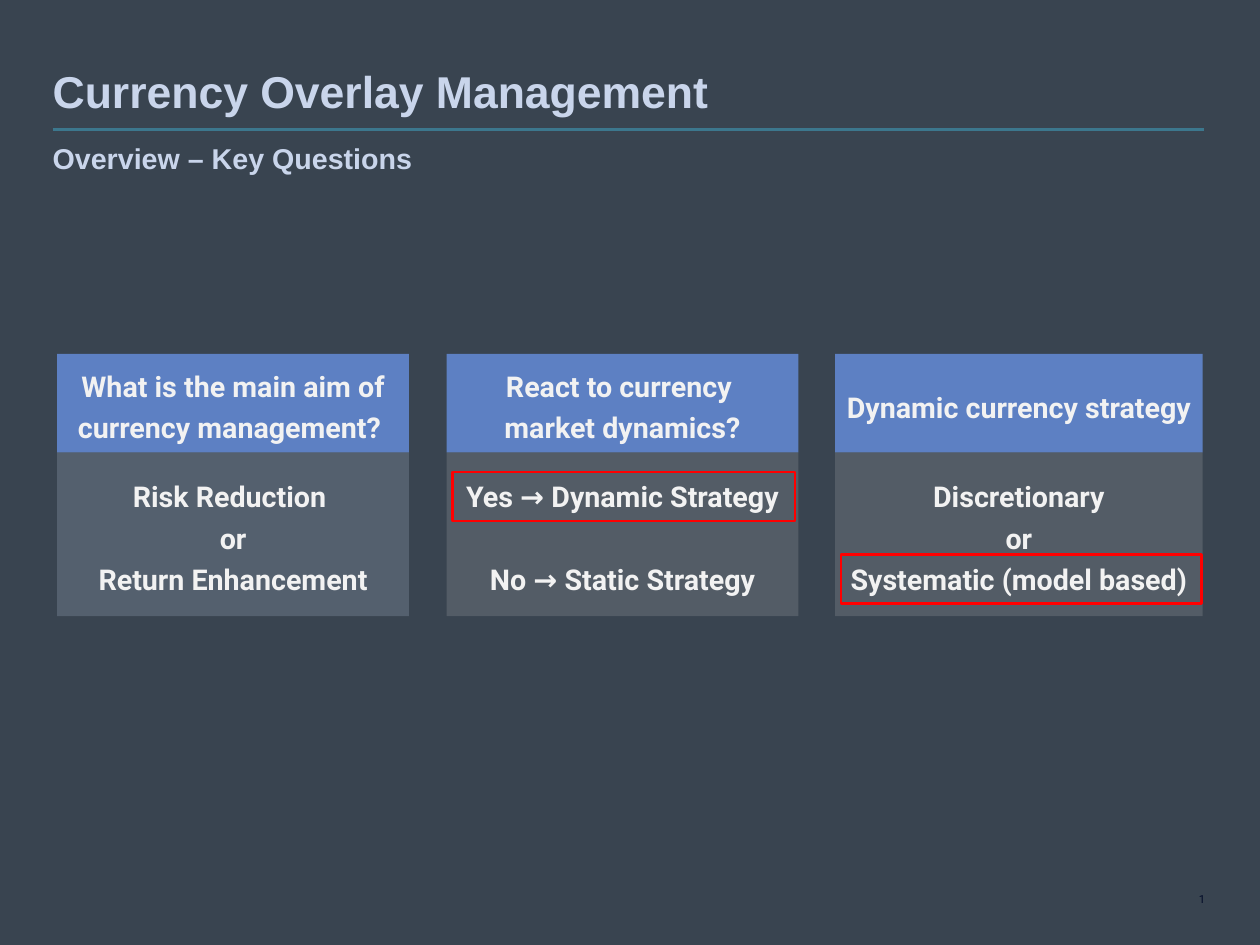
"""Build the currency overlay slide with three question cards."""
from lxml.etree import SubElement
from pptx import Presentation
from pptx.dml.color import RGBColor
from pptx.enum.shapes import MSO_CONNECTOR, MSO_SHAPE
from pptx.enum.text import MSO_ANCHOR, MSO_AUTO_SIZE, PP_ALIGN
from pptx.oxml.ns import qn
from pptx.util import Inches, Pt

COLORS = {
    "background": "394450", "rule": "3C778D", "heading": "C9D5EB",
    "header": "5D80C3", "aim": "C4D2EA", "choice": "BEBEBE",
    "text": "F2F2F2", "number": "010A27", "highlight": "FF0000",
}
CARDS = [
    (0.5, 3.07, "aim", "What is the main aim of currency management? ",
     ["Risk Reduction ", "or", "Return Enhancement"], 0.1),
    (3.9, 3.07, "choice", "React to currency \vmarket dynamics?",
     ["Yes → Dynamic Strategy", "No → Static Strategy"], 26),
    (7.29, 3.21, "choice", "Dynamic currency strategy",
     ["Discretionary", "or", "Systematic (model based)"], 0.1),
]
HIGHLIGHTS = [(7.34, 4.84, 3.15, 0.43), (3.95, 4.12, 2.99, 0.43)]
CARD_TOP, HEADER_HEIGHT, ANSWER_HEIGHT = 3.09, 0.86, 1.43


class SlideBuilder:
    """Hold the style and the current slide."""

    def __init__(self, slide, colors):
        self.s = slide
        self.colors = colors
        fill = slide.background.fill
        fill.solid()
        fill.fore_color.rgb = self.color("background")

    def color(self, name):
        return RGBColor.from_string(self.colors[name])

    def set_text(self, sp, lines, size, color, font="Roboto", bold=True,
                 anchor=MSO_ANCHOR.MIDDLE, align=PP_ALIGN.CENTER, spacing=1.2,
                 before=0, inset=0):
        tf = sp.text_frame
        tf.auto_size = MSO_AUTO_SIZE.NONE
        tf.word_wrap = True
        tf.vertical_anchor = anchor
        tf.margin_left = tf.margin_right = tf.margin_top = tf.margin_bottom = Inches(inset)
        tf.text = "\n".join(lines)
        for p in tf.paragraphs:
            p.alignment = align
            p.line_spacing = spacing
            p.space_before = Pt(before)
            for r in p.runs:
                r.font.name = font
                r.font.size = Pt(size)
                r.font.bold = bold
                r.font.color.rgb = self.color(color)
        return tf

    def placeholder(self, index, box, text, size, anchor, spacing, before=0):
        sp = self.s.placeholders[index]
        sp.left, sp.top, sp.width, sp.height = map(Inches, box)
        tf = self.set_text(sp, [text], size, "heading", "Arial", anchor=anchor,
                           align=PP_ALIGN.LEFT, spacing=spacing, before=before)
        pPr = tf.paragraphs[0]._p.get_or_add_pPr()
        pPr.set("marL", "0")
        pPr.set("indent", "0")
        SubElement(pPr, qn("a:buNone"))

    def rule(self, x1, x2, y):
        line = self.s.shapes.add_connector(
            MSO_CONNECTOR.STRAIGHT, Inches(x1), Inches(y), Inches(x2), Inches(y))
        line.line.color.rgb = self.color("rule")
        line.line.width = Pt(2)
        SubElement(line._element.spPr, qn("a:effectLst"))

    def rectangle(self, shapes, box, fill=None, alpha=None):
        sp = shapes.add_shape(MSO_SHAPE.RECTANGLE, *map(Inches, box))
        sp.shadow.inherit = False
        if fill is None:
            sp.fill.background()
            return sp
        sp.fill.solid()
        sp.fill.fore_color.rgb = self.color(fill)
        sp.line.fill.background()
        if alpha is not None:
            srgb = sp._element.spPr.find(".//" + qn("a:srgbClr"))
            SubElement(srgb, qn("a:alpha"), val=str(alpha * 1000))
        return sp

    def card(self, left, width, fill, question, answers, before):
        shapes = self.s.shapes.add_group_shape().shapes
        header = self.rectangle(shapes, (left, CARD_TOP, width, HEADER_HEIGHT), "header")
        self.set_text(header, [question], 18, "text", inset=0.04)
        body = self.rectangle(
            shapes, (left, CARD_TOP + HEADER_HEIGHT, width, ANSWER_HEIGHT), fill, 20)
        tf = self.set_text(body, answers, 18, "text", before=before)
        tf.paragraphs[0].space_before = Pt(0.1)

    def highlight(self, box):
        sp = self.rectangle(self.s.shapes, box)
        sp.line.color.rgb = self.color("highlight")
        sp.line.width = Pt(1.5)

    def slide_number(self, box):
        sp = self.s.shapes.add_textbox(*map(Inches, box))
        tf = self.set_text(sp, ["1"], 7, "number", bold=False, anchor=MSO_ANCHOR.BOTTOM,
                           align=PP_ALIGN.RIGHT, spacing=1)
        field = tf.paragraphs[0].runs[0]._r
        field.tag = qn("a:fld")
        field.set("id", "{B6F15528-21DE-4FAA-801E-634DDDAF4B2B}")
        field.set("type", "slidenum")


def main():
    prs = Presentation()
    prs.slide_width, prs.slide_height = Inches(11), Inches(8.25)
    s = SlideBuilder(prs.slides.add_slide(prs.slide_layouts[1]), COLORS)
    s.rule(0.46, 10.51, 1.13)
    s.placeholder(0, (0.46, 0, 10.05, 1.03), "Currency Overlay Management", 28,
                  MSO_ANCHOR.BOTTOM, 0.85)
    s.placeholder(1, (0.46, 1.23, 10.09, 0.39), "Overview – Key Questions", 18,
                  MSO_ANCHOR.TOP, 1, 2)
    s.slide_number((10.07, 7.5, 0.45, 0.41))
    for card in CARDS:
        s.card(*card)
    for box in HIGHLIGHTS:
        s.highlight(box)
    prs.save("out.pptx")


if __name__ == "__main__":
    main()
